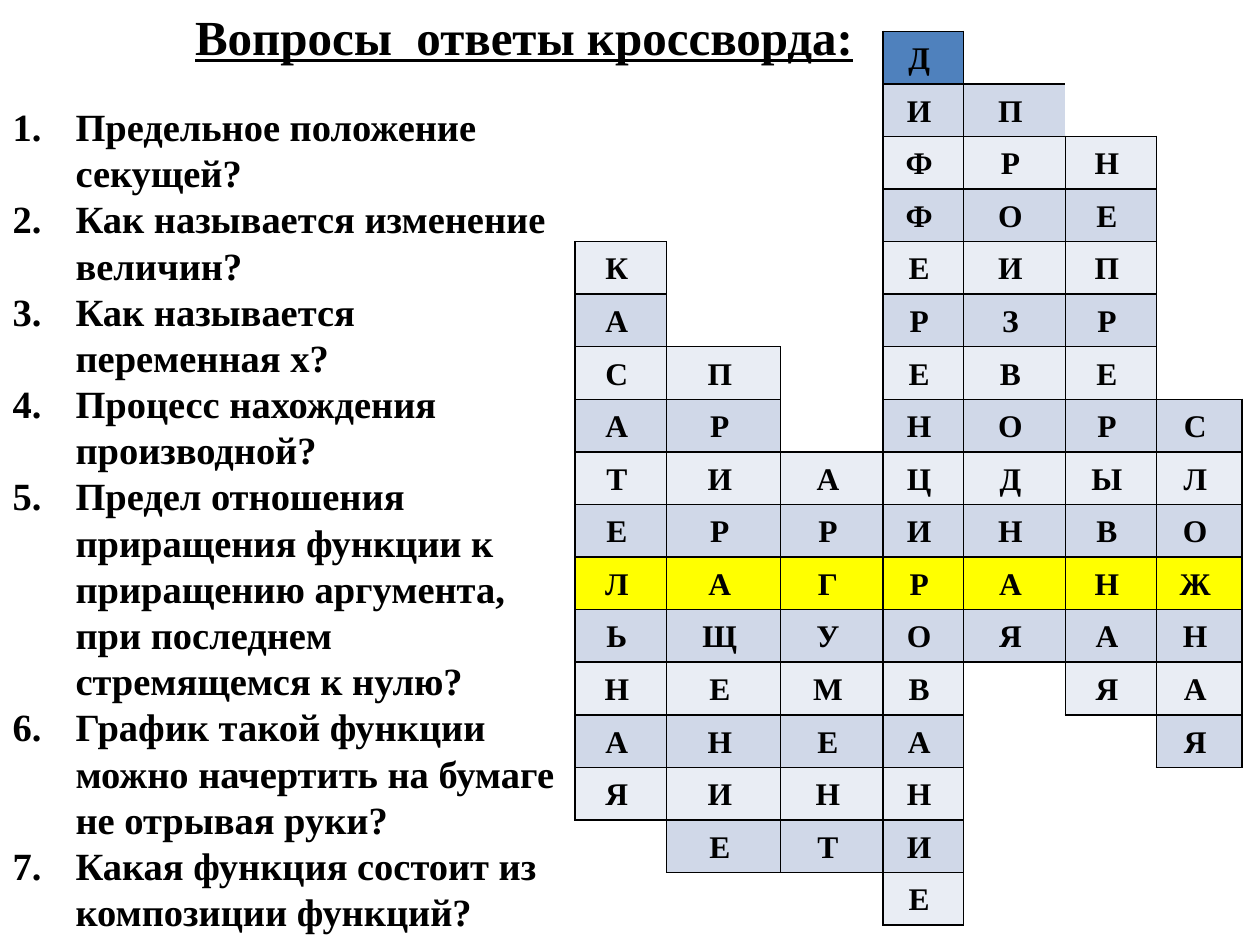
from lxml.etree import SubElement
from pptx import Presentation
from pptx.dml.color import RGBColor
from pptx.enum.text import MSO_ANCHOR as Anchor, MSO_AUTO_SIZE as AutoSize, PP_ALIGN as Align
from pptx.oxml.ns import qn
from pptx.util import Cm, Pt

QUESTIONS = [
    "Предельное положение секущей?",
    "Как называется изменение величин?",
    "Как называется переменная х?",
    "Процесс нахождения производной?",
    "Предел отношения приращения функции к приращению аргумента, при последнем стремящемся к нулю?",
    "График такой функции можно начертить на бумаге не отрывая руки?",
    "Какая функция состоит из композиции функций?",
]

# Each answer runs down one column: (first row, word, column width in cm)
ANSWERS = [
    (4, "КАСАТЕЛЬНАЯ", 1.85),
    (6, "ПРИРАЩЕНИЕ", 2.3),
    (8, "АРГУМЕНТ", 2.06),
    (0, "ДИФФЕРЕНЦИРОВАНИЕ", 1.62),
    (1, "ПРОИЗВОДНАЯ", 2.06),
    (2, "НЕПРЕРЫВНАЯ", 1.83),
    (7, "СЛОЖНАЯ", 1.73),
]
ROW_COUNT, ROW_HEIGHT = 17, 1.06
BAND_FILLS = ["E9EDF4", "D0D8E8"]
SPECIAL_FILLS = {0: "4F81BD", 10: "FFFF00"}  # heading row and key word row
OPEN_EDGE = {(1, 4), (1, 5)}  # the one letter side drawn without a line
SIDES = {"a:lnL": (0, -1), "a:lnR": (0, 1), "a:lnT": (-1, 0), "a:lnB": (1, 0)}


def color(hex_value):
    return RGBColor.from_string(hex_value)


def set_all(target, values):
    for name, value in values.items():
        setattr(target, name, value)


def write(paragraph, text, size, underline=False):
    run = paragraph.add_run()
    run.text = text
    set_all(run.font, {"name": "Times New Roman", "size": Pt(size),
                       "bold": True, "underline": underline})
    run.font.color.rgb = color("000000")


def number(paragraph):
    properties = paragraph._p.get_or_add_pPr()
    properties.set("marL", str(Cm(1.27)))
    properties.set("indent", str(-Cm(1.27)))
    SubElement(properties, qn("a:buFont"), typeface="+mj-lt")
    SubElement(properties, qn("a:buAutoNum"), type="arabicPeriod")


def place(placeholder, left, top, width, height, frame_values):
    set_all(placeholder, {"left": Cm(left), "top": Cm(top),
                          "width": Cm(width), "height": Cm(height)})
    set_all(placeholder.text_frame, frame_values)


def add_title(slide):
    title = slide.shapes.title
    place(title, 3.68, 0, 13.92, 1.45,
          {"word_wrap": False, "vertical_anchor": Anchor.TOP,
           "auto_size": AutoSize.SHAPE_TO_FIT_TEXT})
    heading = title.text_frame.paragraphs[0]
    heading.alignment = Align.LEFT
    write(heading, "Вопросы  ответы кроссворда:", 28, underline=True)


def add_questions(slide):
    body = slide.placeholders[1]
    place(body, 0, 1.86, 11.46, 17.19,
          {"word_wrap": True, "vertical_anchor": Anchor.MIDDLE,
           "auto_size": AutoSize.NONE})
    frame = body.text_frame
    for index, question in enumerate(QUESTIONS):
        paragraph = frame.add_paragraph() if index else frame.paragraphs[0]
        number(paragraph)
        paragraph.space_before = Pt(0)
        write(paragraph, question, 22)


def add_borders(cell, position, letters):
    """Draw a line on each side that touches a letter."""
    properties = cell._tc.get_or_add_tcPr()
    row, column = position
    for index, (tag, (down, across)) in enumerate(SIDES.items()):
        neighbour = (row + down, column + across)
        touches = position in letters or neighbour in letters
        line = properties.makeelement(qn(tag), {"w": str(Pt(1))})
        properties.insert(index, line)
        if touches and {position, neighbour} != OPEN_EDGE:
            fill = SubElement(line, qn("a:solidFill"))
            SubElement(fill, qn("a:srgbClr"), val="000000")
        else:
            SubElement(line, qn("a:noFill"))


def add_crossword(slide):
    letters = {(first + step, column): letter
               for column, (first, word, _) in enumerate(ANSWERS)
               for step, letter in enumerate(word)}
    total_width = sum(width for _, _, width in ANSWERS)
    grid = slide.shapes.add_table(
        ROW_COUNT, len(ANSWERS), Cm(11.59), Cm(0.63),
        Cm(total_width), Cm(ROW_HEIGHT * ROW_COUNT)).table
    set_all(grid, {"first_row": False, "horz_banding": False})
    for column, (_, _, width) in zip(grid.columns, ANSWERS):
        column.width = Cm(width)

    for row in range(ROW_COUNT):
        grid.rows[row].height = Cm(ROW_HEIGHT)
        for column in range(len(ANSWERS)):
            cell, position = grid.cell(row, column), (row, column)
            set_all(cell, {"margin_left": Cm(0.17), "margin_right": Cm(0.33),
                           "margin_top": Cm(0.1), "margin_bottom": Cm(0.1)})
            if position in letters:
                cell.fill.solid()
                cell.fill.fore_color.rgb = color(
                    SPECIAL_FILLS.get(row, BAND_FILLS[row % 2]))
                paragraph = cell.text_frame.paragraphs[0]
                set_all(paragraph, {"alignment": Align.CENTER, "line_spacing": 1.15})
                write(paragraph, letters[position], 18)
            else:
                cell.fill.background()
            add_borders(cell, position, letters)


def main():
    deck = Presentation()
    set_all(deck, {"slide_width": Cm(25.4), "slide_height": Cm(19.05)})
    slide = deck.slides.add_slide(deck.slide_layouts[1])
    add_crossword(slide)
    add_questions(slide)
    add_title(slide)
    deck.save("out.pptx")


if __name__ == "__main__":
    main()
